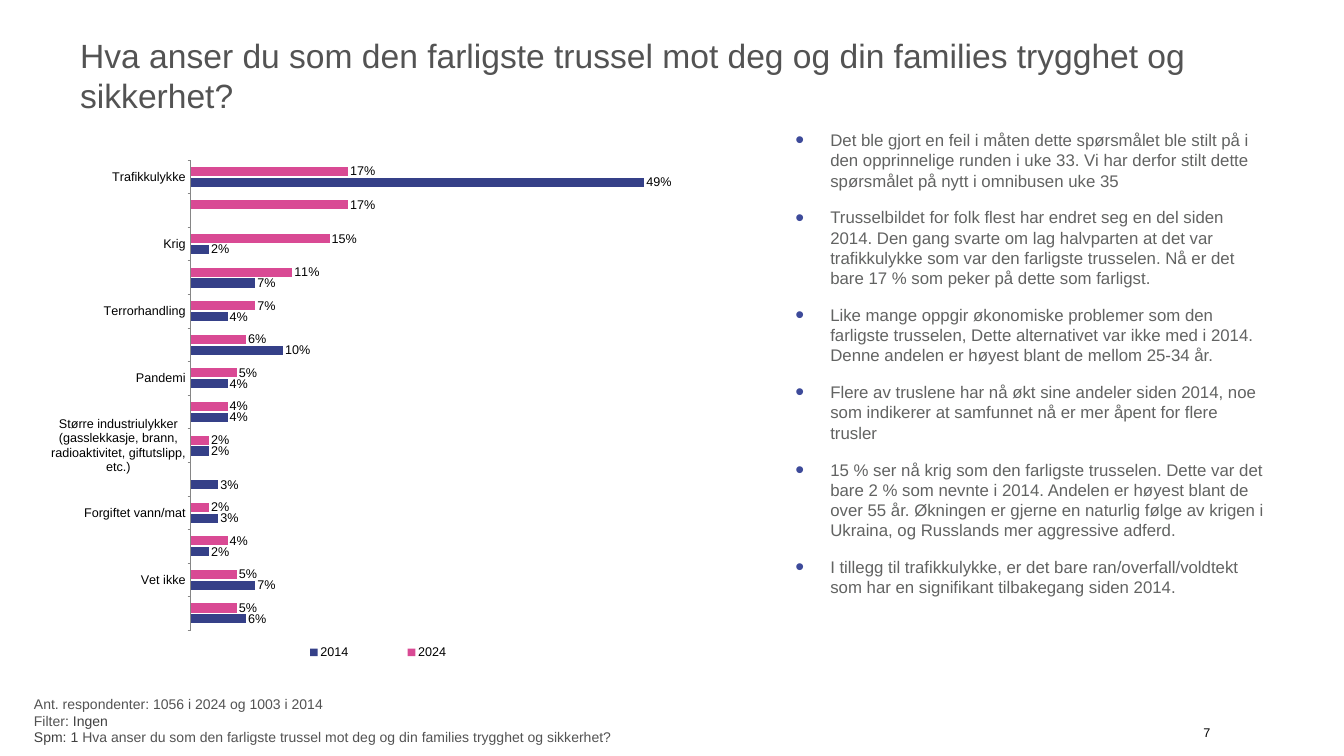
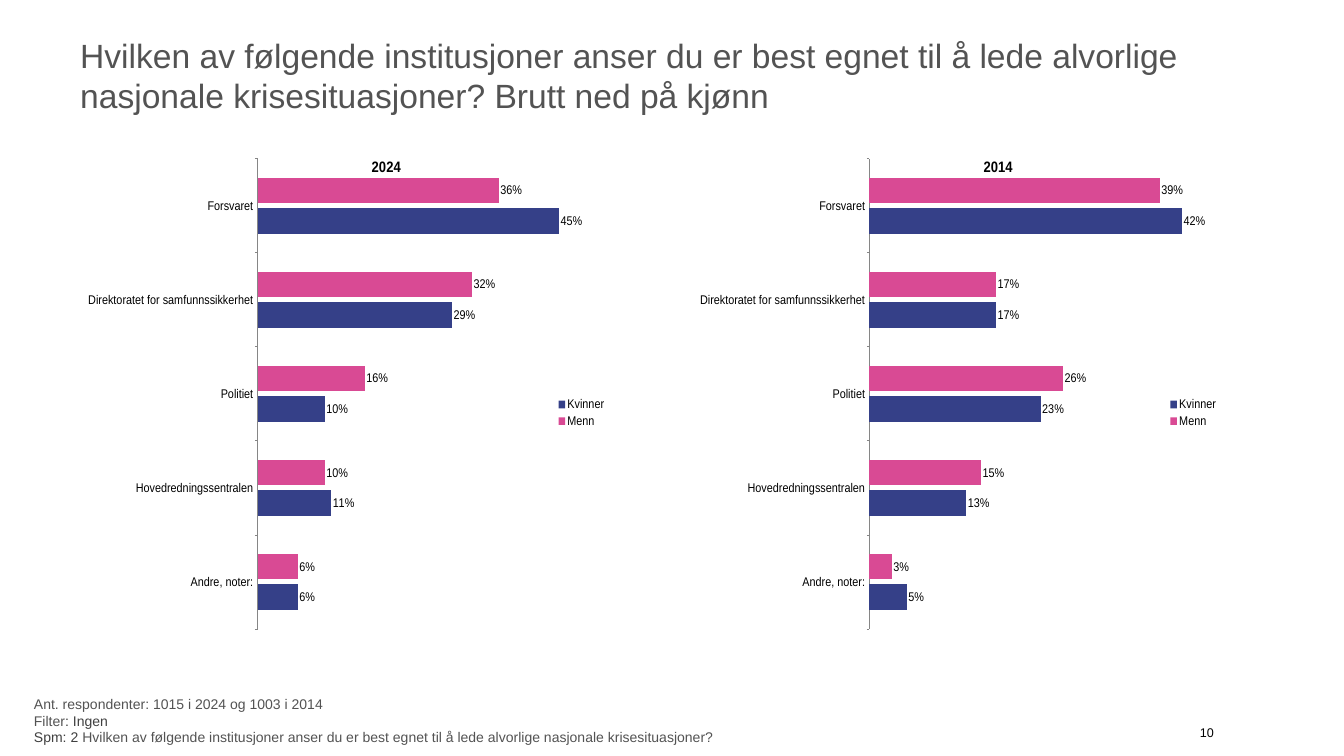
from dataclasses import dataclass

from lxml import etree
from pptx import Presentation
from pptx.chart.data import CategoryChartData
from pptx.dml.color import RGBColor
from pptx.enum.chart import XL_CHART_TYPE as ChartType
from pptx.enum.chart import XL_LABEL_POSITION as LabelPosition
from pptx.enum.chart import XL_LEGEND_POSITION as LegendPosition
from pptx.enum.chart import XL_TICK_LABEL_POSITION as TickLabel
from pptx.enum.chart import XL_TICK_MARK as TickMark
from pptx.enum.text import MSO_ANCHOR as Anchor
from pptx.enum.text import MSO_AUTO_SIZE as AutoSize
from pptx.enum.text import PP_ALIGN as Align
from pptx.oxml.ns import qn
from pptx.util import Pt


@dataclass(frozen=True)
class Theme:
    """Fonts, sizes and colours shared by the slides."""
    font: str = "Arial"
    title_size: float = 48
    body_size: float = 24
    footer_size: float = 20
    chart_size: float = 18
    chart_title_size: float = 21.6
    title: str = "535353"
    footer_accent: str = "404040"
    body: str = "626362"
    bullet: str = "3D4A9A"
    black: str = "000000"
    axis: str = "868686"
    pink: str = "D94A94"
    navy: str = "354088"


THEME = Theme()
PAGE_SIZE = (1920, 1080)
TITLE_BOX = (110, 34, 1703.5, 147)
FOOTER_BOX = (44, 998, 1703.5, 62.5)
NUMBER_BOX = (1709, 1031, 30, 30)
BULLET_BOX = (1129, 182, 688, 777)
THREAT_BOX = (44, 203, 1067, 777.6)
GENDER_BOX = (126, 201, 747.4, 777.6)
GENDER_STEP = 874
INSET = 4.5
BULLET_INDENT = 50
PLOT_LAYOUT = {"x": 0.214, "y": 0.033, "w": 0.744, "h": 0.864}
THREAT_LEGEND = {"x": 0.3, "y": 0.92, "w": 0.33, "h": 0.035}

THREAT_TITLE = "Hva anser du som den farligste trussel mot deg og din families trygghet og sikkerhet?"
LEADER_QUESTION = ("Hvilken av følgende institusjoner anser du er best egnet til å lede "
                   "alvorlige nasjonale krisesituasjoner?")
FINDINGS = [
    "Det ble gjort en feil i måten dette spørsmålet ble stilt på i den opprinnelige runden i uke 33. "
    "Vi har derfor stilt dette spørsmålet på nytt i omnibusen uke 35",
    "Trusselbildet for folk flest har endret seg en del siden 2014. Den gang svarte om lag halvparten "
    "at det var trafikkulykke som var den farligste trusselen. Nå er det bare 17 % som peker på dette "
    "som farligst.",
    "Like mange oppgir økonomiske problemer som den farligste trusselen, Dette alternativet var ikke "
    "med i 2014. Denne andelen er høyest blant de mellom 25-34 år.",
    "Flere av truslene har nå økt sine andeler siden 2014, noe som indikerer at samfunnet nå er mer "
    "åpent for flere trusler",
    "15 % ser nå krig som den farligste trusselen. Dette var det bare 2 % som nevnte i 2014. Andelen er "
    "høyest blant de over 55 år. Økningen er gjerne en naturlig følge av krigen i Ukraina, og Russlands "
    "mer aggressive adferd.",
    "I tillegg til trafikkulykke, er det bare ran/overfall/voldtekt som har en signifikant tilbakegang "
    "siden 2014.",
]
THREATS = {
    "Trafikkulykke": (0.17, 0.49),
    "Økonomiske problemer": (0.17, None),
    "Krig": (0.15, 0.02),
    "Svindel/identitetstyveri": (0.11, 0.07),
    "Terrorhandling": (0.07, 0.04),
    "Ran/overfall/voldtekt": (0.06, 0.1),
    "Pandemi": (0.05, 0.04),
    "Naturkatastrofe som flom, skogbrann, jordskjelv, etc.": (0.04, 0.04),
    "Større industriulykker (gasslekkasje, brann, radioaktivitet, giftutslipp, etc.)": (0.02, 0.02),
    "Cyberterror, telefon- og internettsammenbrudd": (None, 0.03),
    "Forgiftet vann/mat": (0.02, 0.03),
    "Annet, noter:": (0.04, 0.02),
    "Vet ikke": (0.05, 0.07),
    "Ingen formening": (0.05, 0.06),
}
INSTITUTIONS = ["Forsvaret", "Direktoratet for samfunnssikkerhet", "Politiet",
                "Hovedredningssentralen", "Andre, noter:"]
GENDER_YEARS = {
    "2024": (0.5, [(0.36, 0.45), (0.32, 0.29), (0.16, 0.1), (0.1, 0.11), (0.06, 0.06)]),
    "2014": (0.45, [(0.39, 0.42), (0.17, 0.17), (0.26, 0.23), (0.15, 0.13), (0.03, 0.05)]),
}


def apply(target, values):
    """Set each attribute named in a dict of format values."""
    for name, value in values.items():
        setattr(target, name, value)


def style_font(font, size, color, bold=False):
    """Give a font the theme typeface, a size and a colour."""
    apply(font, {"name": THEME.font, "size": Pt(size), "bold": bold})
    font.color.rgb = RGBColor.from_string(color)


def add_span(para, text, size, color):
    """Append one formatted run to a paragraph."""
    span = para.add_run()
    span.text = text
    style_font(span.font, size, color)


def set_frame(frame, inset=INSET, **values):
    """Set the margins and the other format values of a text frame."""
    apply(frame, {"word_wrap": True, "auto_size": AutoSize.NONE,
                  **{f"margin_{side}": Pt(inset) for side in ("left", "top", "right", "bottom")},
                  **values})


def add_text_frame(page, box, **values):
    """Add a text box and return its frame."""
    frame = page.shapes.add_textbox(*map(Pt, box)).text_frame
    set_frame(frame, **values)
    return frame


def place_title(page, box, text):
    """Move, fill and format the title placeholder."""
    title = page.shapes.title
    apply(title, dict(zip(("left", "top", "width", "height"), map(Pt, box))))
    set_frame(title.text_frame, vertical_anchor=Anchor.MIDDLE)
    para = title.text_frame.paragraphs[0]
    para.alignment = Align.LEFT
    add_span(para, text, THEME.title_size, THEME.title)


def add_footer(page, box, respondents, number, question):
    """Add the three lines about the survey question."""
    frame = add_text_frame(page, box, vertical_anchor=Anchor.MIDDLE)
    lines = [
        [(f"Ant. respondenter: {respondents} i 2024 og 1003 i 2014", THEME.title)],
        [("Filter", THEME.title), (": Ingen", THEME.footer_accent)],
        [(f"Spm: {number} ", THEME.footer_accent), (question, THEME.title)],
    ]
    for index, line in enumerate(lines):
        para = frame.add_paragraph() if index else frame.paragraphs[0]
        for text, color in line:
            add_span(para, text, THEME.footer_size, color)


def add_page_number(page, box, number):
    """Add the centred page number."""
    frame = add_text_frame(page, box, word_wrap=False, auto_size=AutoSize.SHAPE_TO_FIT_TEXT)
    para = frame.paragraphs[0]
    para.alignment = Align.CENTER
    add_span(para, number, THEME.chart_size, THEME.black)


def add_bullet(para):
    """Give a paragraph a hanging coloured bullet."""
    properties = para._p.get_or_add_pPr()
    apply_indent = {"marL": Pt(BULLET_INDENT), "indent": -Pt(BULLET_INDENT)}
    for name, value in apply_indent.items():
        properties.set(name, str(value))
    color = etree.SubElement(properties, qn("a:buClr"))
    etree.SubElement(color, qn("a:srgbClr")).set("val", THEME.bullet)
    etree.SubElement(properties, qn("a:buSzPct")).set("val", "150000")
    etree.SubElement(properties, qn("a:buFont")).set("typeface", THEME.font)
    etree.SubElement(properties, qn("a:buChar")).set("char", "•")


def add_findings(page, box, findings):
    """Add the bulleted list of findings."""
    frame = add_text_frame(page, box, margin_left=Pt(7.2), margin_right=Pt(7.2),
                           margin_top=Pt(3.6), margin_bottom=Pt(3.6))
    for index, finding in enumerate(findings):
        para = frame.add_paragraph() if index else frame.paragraphs[0]
        add_bullet(para)
        apply(para, {"space_before": Pt(18 if index else 0), "space_after": Pt(6)})
        add_span(para, finding, THEME.body_size, THEME.body)


def set_layout(element, values, inner=False):
    """Pin a plot area or legend to fractions of the chart."""
    for old in element.findall(qn("c:layout")):
        element.remove(old)
    layout = etree.Element(qn("c:layout"))
    manual = etree.SubElement(layout, qn("c:manualLayout"))
    entries = [("layoutTarget", "inner")] if inner else []
    entries += [("xMode", "edge"), ("yMode", "edge"), *values.items()]
    for name, value in entries:
        etree.SubElement(manual, qn(f"c:{name}")).set("val", str(value))
    position = element.find(qn("c:legendPos"))
    if position is None:
        element.insert(0, layout)
    else:
        position.addnext(layout)


def format_axes(chart, maximum):
    """Format the category axis and hide the value axis."""
    categories, values = chart.category_axis, chart.value_axis
    apply(categories, {"reverse_order": True, "major_tick_mark": TickMark.OUTSIDE,
                       "minor_tick_mark": TickMark.NONE, "has_major_gridlines": False,
                       "tick_label_position": TickLabel.LOW})
    categories.format.line.color.rgb = RGBColor.from_string(THEME.axis)
    categories.format.line.width = Pt(1)
    apply(values, {"visible": False, "has_major_gridlines": False,
                   "minimum_scale": 0, "maximum_scale": maximum})


def add_bar_chart(page, box, categories, names, rows, maximum, title=None, legend=None):
    """Add a clustered bar chart of percentages for two groups."""
    data = CategoryChartData(number_format="0%")
    data.categories = categories
    for name, values in zip(names, zip(*rows)):
        data.add_series(name, values)
    chart = page.shapes.add_chart(ChartType.BAR_CLUSTERED, *map(Pt, box), data).chart
    style_font(chart.font, THEME.chart_size, THEME.black)
    chart.has_title = title is not None
    if title:
        chart.chart_title.include_in_layout = False
        frame = chart.chart_title.text_frame
        frame.text = title
        style_font(frame.paragraphs[0].runs[0].font, THEME.chart_title_size, THEME.black, True)
        overlay = chart._chartSpace.chart.find(qn("c:title")).find(qn("c:overlay"))
        if overlay is not None:
            overlay.set("val", "1")
    format_axes(chart, maximum)
    plot = chart.plots[0]
    apply(plot, {"gap_width": 150, "overlap": -20, "vary_by_categories": False,
                 "has_data_labels": True})
    apply(plot.data_labels, {"show_value": True, "number_format": "0%",
                             "number_format_is_linked": False,
                             "position": LabelPosition.OUTSIDE_END})
    for series, color in zip(plot.series, (THEME.pink, THEME.navy)):
        series.format.fill.solid()
        series.format.fill.fore_color.rgb = RGBColor.from_string(color)
        series.invert_if_negative = False
    chart.has_legend = True
    apply(chart.legend, {"position": LegendPosition.RIGHT, "include_in_layout": False})
    set_layout(chart._chartSpace.chart.plotArea, PLOT_LAYOUT, inner=True)
    if legend:
        set_layout(chart.legend._element, legend)


def add_page(deck, title, number, respondents, question_number, question):
    """Add a slide with its title, footer and page number."""
    page = deck.slides.add_slide(deck.slide_layouts[5])
    place_title(page, TITLE_BOX, title)
    add_page_number(page, NUMBER_BOX, number)
    add_footer(page, FOOTER_BOX, respondents, question_number, question)
    return page


def build_threat_page(deck):
    """Build the slide that compares threats in two years."""
    page = add_page(deck, THREAT_TITLE, "7", 1056, 1, THREAT_TITLE)
    add_findings(page, BULLET_BOX, FINDINGS)
    add_bar_chart(page, THREAT_BOX, THREATS.keys(), ("2024", "2014"), THREATS.values(), 0.6,
                  legend=THREAT_LEGEND)


def build_gender_page(deck):
    """Build the slide that splits institutions by gender, one chart a year."""
    page = add_page(deck, f"{LEADER_QUESTION} Brutt ned på kjønn", "10", 1015, 2, LEADER_QUESTION)
    left, *rest = GENDER_BOX
    for index, (year, (maximum, rows)) in enumerate(GENDER_YEARS.items()):
        add_bar_chart(page, (left + index * GENDER_STEP, *rest), INSTITUTIONS,
                      ("Menn", "Kvinner"), rows, maximum, title=year)


def main():
    """Build and save the deck."""
    deck = Presentation()
    deck.slide_width, deck.slide_height = map(Pt, PAGE_SIZE)
    build_threat_page(deck)
    build_gender_page(deck)
    deck.save("out.pptx")


if __name__ == "__main__":
    main()
